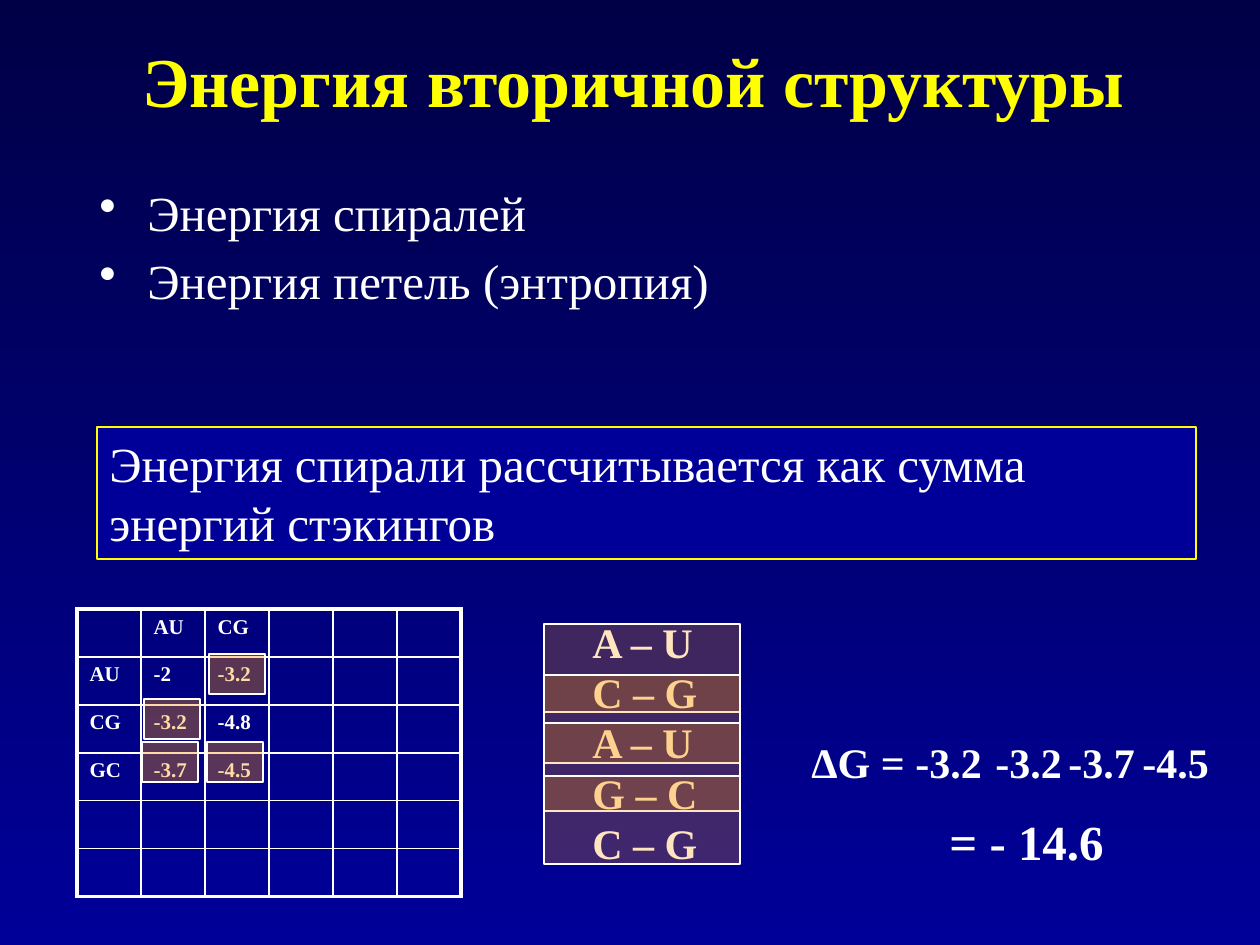
from lxml.etree import SubElement
from pptx import Presentation
from pptx.dml.color import RGBColor
from pptx.enum.shapes import MSO_SHAPE
from pptx.enum.text import MSO_ANCHOR, MSO_AUTO_SIZE, PP_ALIGN
from pptx.oxml.ns import qn
from pptx.util import Emu, Pt

COLORS = {
    "white": "FFFFFF",
    "yellow": "FFFF00",
    "orange": "FF9900",
    "blue": "000099",
    "night": "000046",
}
FONT = "Times New Roman"
ENERGIES = [
    ["", "AU", "CG"],
    ["AU", "-2", "-3.2"],
    ["CG", "-3.2", "-4.8"],
    ["GC", "-3.7", "-4.5"],
]


def px(length):
    return Emu(round(length * 914400 / 126))


def rgb(name):
    return RGBColor.from_string(COLORS[name])


def write(frame, text, size=28, color="white", bold=False,
          align=PP_ALIGN.LEFT, bullet=False):
    for number, paragraph in enumerate(text if isinstance(text, list) else [text]):
        para = frame.add_paragraph() if number else frame.paragraphs[0]
        para.alignment = align
        if bullet:
            para.space_before = Pt(size * 0.2)
            properties = para._p.get_or_add_pPr()
            properties.set("marL", str(px(48)))
            properties.set("indent", str(-px(48)))
            SubElement(properties, qn("a:buChar"), char="•")
        for index, line in enumerate(paragraph.split("\n")):
            if index:
                para.add_line_break()
            span = para.add_run()
            span.text = line
            span.font.name = FONT
            span.font.size = Pt(size)
            span.font.bold = bold
            span.font.color.rgb = rgb(color)


class Slide:
    """Draws styled elements on the current page."""

    def __init__(self, page):
        self.page = page

    def background(self, top, bottom):
        fill = self.page.background.fill
        fill.gradient()
        fill.gradient_angle = 270
        for stop, color, position in zip(fill.gradient_stops, (top, bottom), (0, 1)):
            stop.color.rgb = rgb(color)
            stop.position = position

    def text(self, left, top, width, height, text, wrap=False,
             anchor=MSO_ANCHOR.TOP, **style):
        box = self.page.shapes.add_textbox(px(left), px(top), px(width), px(height))
        frame = box.text_frame
        frame.word_wrap = wrap
        frame.auto_size = MSO_AUTO_SIZE.NONE if wrap else MSO_AUTO_SIZE.SHAPE_TO_FIT_TEXT
        frame.vertical_anchor = anchor
        write(frame, text, **style)

    def rectangle(self, left, top, width, height, fill, line, opacity=100):
        box = self.page.shapes.add_shape(
            MSO_SHAPE.RECTANGLE, px(left), px(top), px(width), px(height))
        box.shadow.inherit = False
        box.fill.solid()
        box.fill.fore_color.rgb = rgb(fill)
        box.line.color.rgb = rgb(line)
        box.line.width = Pt(0.75)
        if opacity < 100:
            color = box._element.spPr.find(qn("a:solidFill"))[0]
            SubElement(color, qn("a:alpha"), val=str(opacity * 1000))
        return box

    def note(self, left, top, width, height, text):
        frame = self.rectangle(left, top, width, height, "blue", "yellow").text_frame
        frame.word_wrap = True
        frame.vertical_anchor = MSO_ANCHOR.TOP
        write(frame, text)

    def border(self, cell, side, width):
        line = SubElement(cell._tc.get_or_add_tcPr(), qn(f"a:ln{side}"), w=str(Pt(width)))
        fill = SubElement(line, qn("a:solidFill"))
        SubElement(fill, qn("a:srgbClr"), val=COLORS["white"])

    def table(self, left, top, cell_width, cell_height, count, values):
        table = self.page.shapes.add_table(
            count, count, px(left), px(top),
            px(cell_width * count), px(cell_height * count)).table
        table.first_row = table.horz_banding = False
        last = count - 1
        for row in range(count):
            table.rows[row].height = px(cell_height)
            table.columns[row].width = px(cell_width)
            for column in range(count):
                cell = table.cell(row, column)
                filled = row < len(values) and column < len(values[row])
                write(cell.text_frame, values[row][column] if filled else "",
                      size=12, bold=True)
                edges = {"L": column == 0, "R": column == last,
                         "T": row == 0, "B": row == last}
                for side, outer in edges.items():
                    self.border(cell, side, 2.25 if outer else 1)
                cell.fill.background()


def main():
    deck = Presentation()
    deck.slide_width, deck.slide_height = px(1260), px(945)
    slide = Slide(deck.slides.add_slide(deck.slide_layouts[6]))
    slide.background("night", "blue")

    slide.text(98, 0, 1071, 158, "Энергия вторичной структуры", wrap=True,
               anchor=MSO_ANCHOR.MIDDLE, size=40, color="yellow", bold=True,
               align=PP_ALIGN.CENTER)
    slide.text(87, 176, 769, 166, ["Энергия спиралей", "Энергия петель (энтропия)"],
               wrap=True, bullet=True)
    slide.note(97, 427, 1099, 132,
               "Энергия спирали рассчитывается как сумма энергий стэкингов")

    slide.table(77, 609, 64, 44, 6, ENERGIES)
    for left, top in [(144, 699), (209, 654), (142, 742), (207, 742)]:
        slide.rectangle(left, top, 56, 40, "orange", "white", opacity=35)

    slide.text(580, 610, 130, 265, ["A – U\nC – G", "A – U", "G – C", "C – G"],
               size=24, bold=True)
    for top in (624, 675, 723, 776):
        slide.rectangle(544, top, 196, 88, "orange", "white", opacity=25)

    slide.text(799, 730, 129, 63, "ΔG =", size=24, bold=True)
    for left, energy in [(903, "-3.2"), (983, "-3.2"), (1056, "-3.7"), (1130, "-4.5")]:
        slide.text(left, 730, 92, 63, energy, size=24, bold=True)
    slide.text(937, 805, 180, 72, "= - 14.6", bold=True)

    deck.save("out.pptx")


if __name__ == "__main__":
    main()
